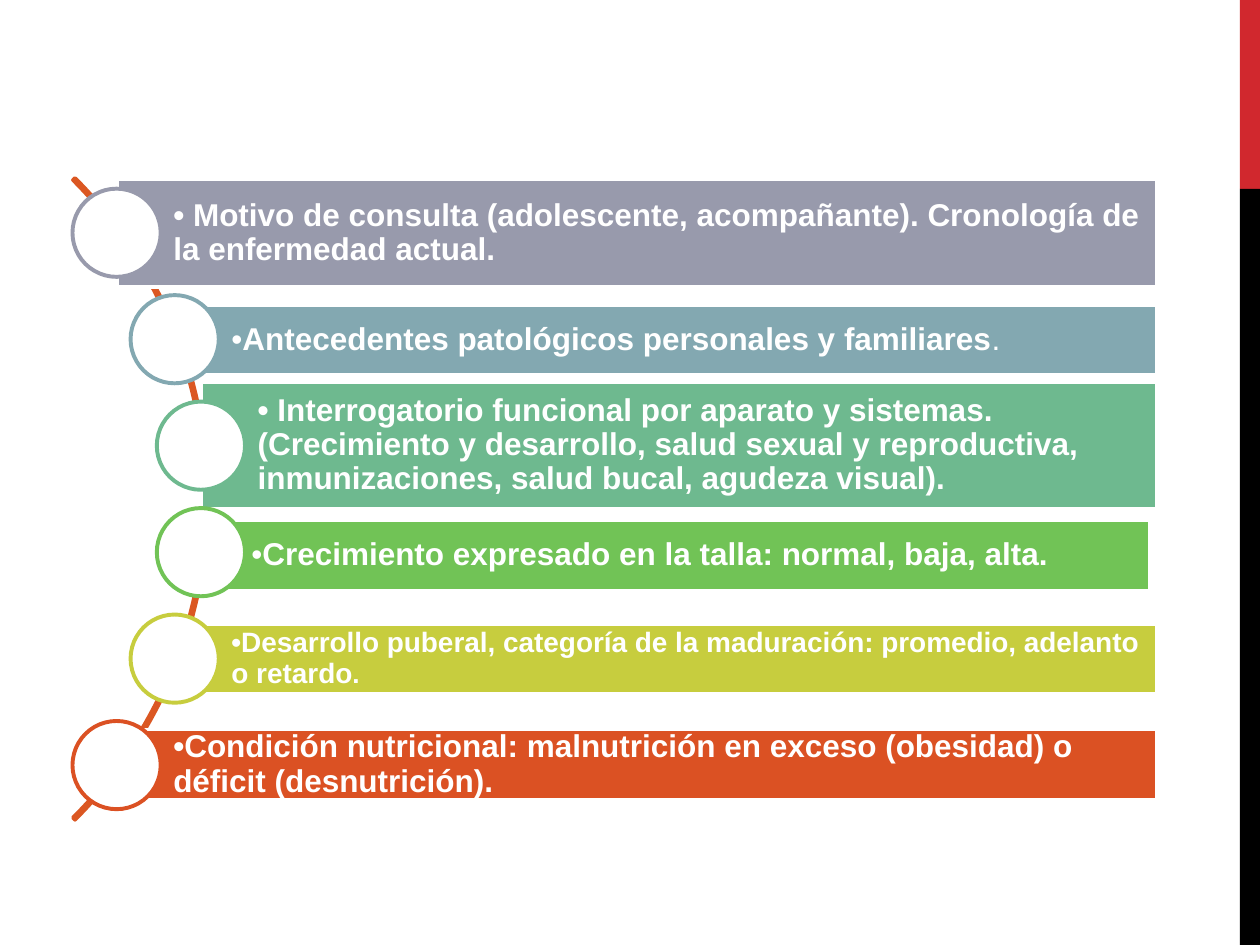
from math import sqrt

from pptx import Presentation
from pptx.dml.color import RGBColor
from pptx.enum.shapes import MSO_SHAPE as SHAPE
from pptx.enum.text import MSO_ANCHOR as ANCHOR, PP_ALIGN as ALIGN
from pptx.util import Inches, Pt

W, H = 10, 7.5
COLORS = {
    "white": "FFFFFF", "black": "000000", "red": "D1282E", "arc": "DB5722",
    "gray": "989AAC", "blue": "83A8B1", "teal": "6EB98F",
    "green": "71C356", "lime": "C7CD3E", "orange": "DB5123",
}

# Curve and the circles that follow it
ARC_X, ARC_Y, ARC_R = -1.95, 3.96, 3.6
NODE_X, NODE_R = -1.94, 3.56
PITCH, CIRCLE = 0.845, 0.7
BAR_RIGHT = 9.18

# Color, bar top, bar height, bar shift, runs of (text, size, bold)
ITEMS = [
    ("gray", 1.42, 0.86, 0, [
        ("• Motivo de consulta (adolescente, acompañante). "
         "Cronología de la enfermedad actual.", 18, True)]),
    ("blue", 2.42, 0.56, 0, [
        ("•", 18, False),
        ("Antecedentes patológicos personales y familiares", 18, True),
        (".", 18, False)]),
    ("teal", 3.03, 1.01, 0, [
        ("• Interrogatorio funcional por aparato y sistemas. "
         "(Crecimiento y desarrollo, salud sexual y reproductiva, "
         "inmunizaciones, salud bucal, agudeza visual).", 18, True)]),
    ("green", 4.13, 0.56, -0.05, [
        ("•", 18, False),
        ("Crecimiento expresado en la talla: normal, baja, alta.", 18, True)]),
    ("lime", 4.95, 0.56, 0, [
        ("•Desarrollo puberal, categoría de la maduración: "
         "promedio, adelanto o retardo", 16, True),
        (".", 15, True)]),
    ("orange", 5.79, 0.56, 0, [
        ("•Condición nutricional: malnutrición en exceso (obesidad) "
         "o déficit (desnutrición).", 18, True)]),
]


def rgb(name):
    return RGBColor.from_string(COLORS[name])


def add_shape(s, kind, x, y, w, h, fill=None, line=None):
    sp = s.shapes.add_shape(kind, Inches(x), Inches(y), Inches(w), Inches(h))
    sp.shadow.inherit = False
    if fill:
        sp.fill.solid()
        sp.fill.fore_color.rgb = rgb(fill)
    else:
        sp.fill.background()
    if line:
        sp.line.color.rgb = rgb(line)
        sp.line.width = Pt(2.25)
    else:
        sp.line.fill.background()
    return sp


def add_text(sp, runs):
    tf = sp.text_frame
    tf.word_wrap = True
    tf.vertical_anchor = ANCHOR.MIDDLE
    tf.margin_left = Inches(0.45)
    tf.margin_right = tf.margin_top = tf.margin_bottom = Inches(0.05)
    p = tf.paragraphs[0]
    p.alignment = ALIGN.LEFT
    p.line_spacing = 0.9
    for text, size, bold in runs:
        r = p.add_run()
        r.text = text
        r.font.name = "Arial"
        r.font.size = Pt(size)
        r.font.bold = bold
        r.font.color.rgb = rgb("white")


def add_side_band(s):
    x, split = 0.984 * W, 0.2 * H
    add_shape(s, SHAPE.RECTANGLE, x, 0, W - x, split, "red")
    add_shape(s, SHAPE.RECTANGLE, x, split, W - x, H - split, "black")


def add_arc(s):
    arc = add_shape(s, SHAPE.BLOCK_ARC, ARC_X - ARC_R, ARC_Y - ARC_R,
                    2 * ARC_R, 2 * ARC_R, line="arc")
    for i, value in enumerate((189, 27, 0.003)):  # from 315 to 45 degrees
        arc.adjustments[i] = value


def add_item(s, row, color, top, height, shift, runs):
    dy = (row - (len(ITEMS) - 1) / 2) * PITCH
    cx, cy = NODE_X + sqrt(NODE_R ** 2 - dy ** 2), ARC_Y + dy
    bar = add_shape(s, SHAPE.RECTANGLE, cx + shift, top, BAR_RIGHT - cx,
                    height, color, "white")
    add_text(bar, runs)
    add_shape(s, SHAPE.OVAL, cx - CIRCLE / 2, cy - CIRCLE / 2,
              CIRCLE, CIRCLE, "white", color)


def main():
    prs = Presentation()
    prs.slide_width, prs.slide_height = Inches(W), Inches(H)
    s = prs.slides.add_slide(prs.slide_layouts[6])
    add_side_band(s)
    add_arc(s)
    for row, item in enumerate(ITEMS):
        add_item(s, row, *item)
    prs.save("out.pptx")


if __name__ == "__main__":
    main()
